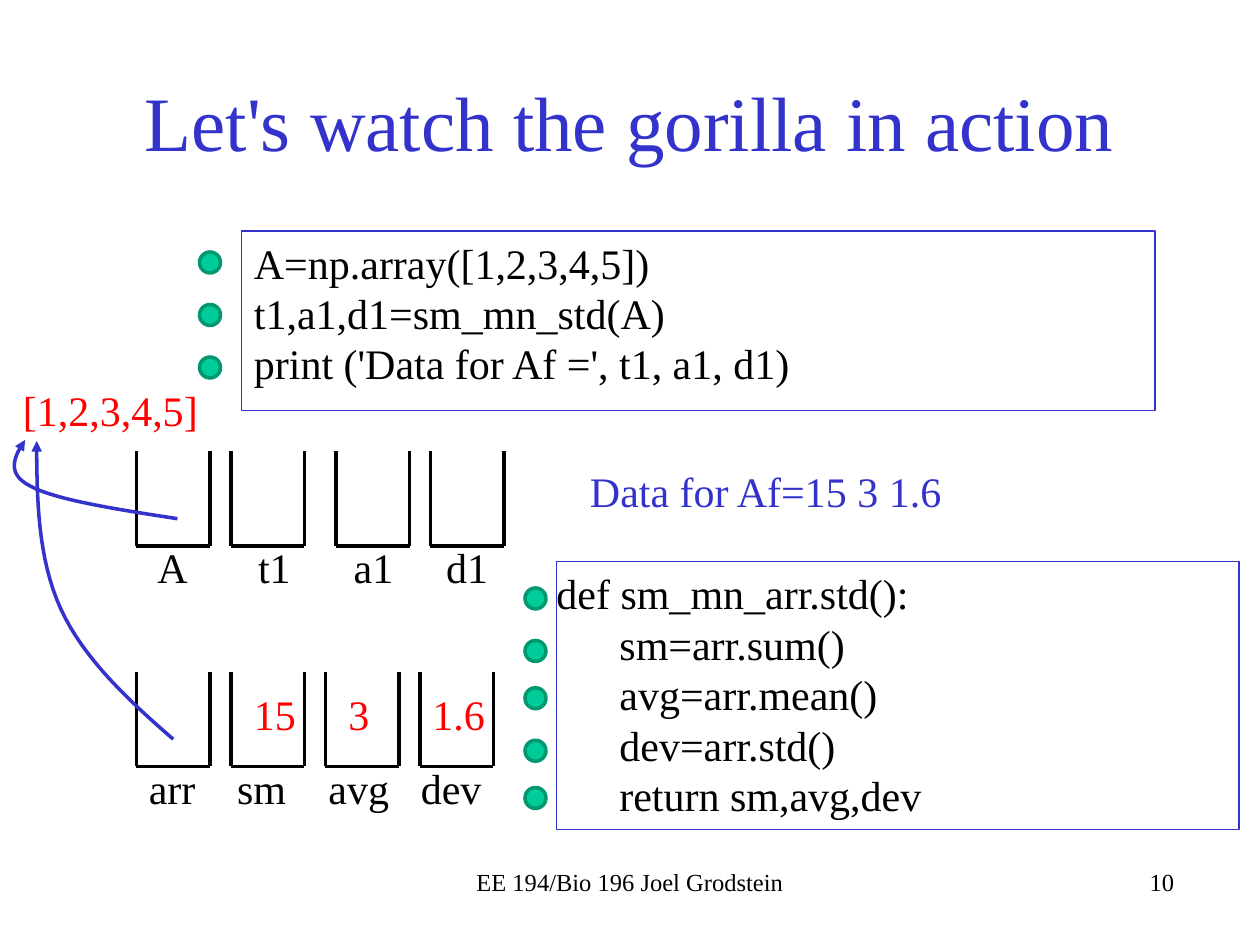
"""Build the slide that steps through variables during a NumPy function call."""
from lxml import etree
from pptx import Presentation
from pptx.dml.color import RGBColor
from pptx.enum.shapes import MSO_CONNECTOR, MSO_SHAPE
from pptx.enum.text import MSO_ANCHOR, PP_ALIGN
from pptx.oxml.ns import qn
from pptx.util import Inches, Pt

STRAIGHT = MSO_CONNECTOR.STRAIGHT
RECTANGLE, OVAL = MSO_SHAPE.RECTANGLE, MSO_SHAPE.OVAL
TOP, MIDDLE = MSO_ANCHOR.TOP, MSO_ANCHOR.MIDDLE
LEFT, CENTER, RIGHT = PP_ALIGN.LEFT, PP_ALIGN.CENTER, PP_ALIGN.RIGHT
BLUE = RGBColor(0x33, 0x33, 0xCC)
BLACK = RGBColor(0, 0, 0)
RED = RGBColor(0xFF, 0, 0)
GREEN = RGBColor(0, 0xCC, 0x99)
DARK_GREEN = RGBColor(0, 0x97, 0x71)

presentation = Presentation()
presentation.slide_width, presentation.slide_height = Inches(10), Inches(7.5)
UNIT = presentation.slide_width / 120
slide = presentation.slides.add_slide(presentation.slide_layouts[5])
shapes = slide.shapes


def grid(*units):
    """Turn grid units into slide lengths."""
    return [round(unit * UNIT) for unit in units]


def write(shape, text, size=24, color=BLACK, align=LEFT, anchor=TOP):
    """Fill a shape with lines of text, indenting those that start with a tab."""
    frame = shape.text_frame
    frame.word_wrap = True
    frame.vertical_anchor = anchor
    for index, line in enumerate(text.split("\n")):
        paragraph = frame.add_paragraph() if index else frame.paragraphs[0]
        paragraph.text = line.lstrip("\t")
        paragraph.level = int(line.startswith("\t"))
        paragraph.alignment = align
        paragraph.line_spacing = Pt(1.2 * size)
        paragraph.font.name = "Times New Roman"
        paragraph.font.size = Pt(size)
        paragraph.font.color.rgb = color


title = shapes.title
title.left, title.top, title.width, title.height = grid(9, 4, 102, 15)
write(title, "Let's watch the gorilla in action", 44, BLUE, CENTER, MIDDLE)

CALLER = "A=np.array([1,2,3,4,5])\nt1,a1,d1=sm_mn_std(A)\nprint ('Data for Af =', t1, a1, d1)"
FUNCTION = "def sm_mn_arr.std():\n\tsm=arr.sum()\n\tavg=arr.mean()\n\tdev=arr.std()\n\treturn sm,avg,dev"
for code, inset, box in (
    (CALLER, 0.1, (23, 22, 87, 17.1)),
    (FUNCTION, 0, (53, 53.5, 65, 25.5)),
):
    code_box = shapes.add_shape(RECTANGLE, *grid(*box))
    code_box.shadow.inherit = False
    code_box.fill.background()
    code_box.line.color.rgb = BLUE
    code_box.line.width = Pt(0.75)
    code_box.text_frame.margin_left = code_box.text_frame.margin_right = Inches(inset)
    write(code_box, code)

for left, tops in ((19, (24, 29, 34)), (50, (56, 61, 65.5, 70.5, 75))):
    for top in tops:
        dot = shapes.add_shape(OVAL, *grid(left, top, 2, 2))
        dot.shadow.inherit = False
        dot.fill.solid()
        dot.fill.fore_color.rgb = GREEN
        dot.line.color.rgb = DARK_GREEN
        dot.line.width = Pt(2)

for top, lefts in ((43, (13, 22, 32, 41)), (64, (13, 22, 31, 40))):
    bottom = top + 9
    for left in lefts:
        right = left + 7
        for side in (
            (left, top, left, bottom),
            (right, top, right, bottom),
            (left, bottom, right, bottom),
        ):
            edge = shapes.add_connector(STRAIGHT, *grid(*side))
            edge.line.color.rgb = BLACK
            edge.line.width = Pt(2.25)
            etree.SubElement(edge._element.spPr, qn("a:effectLst"))

for text, box, size, color, align in (
    ("[1,2,3,4,5]", (1, 36, 20, 6), 24, RED, LEFT),
    ("15", (23, 65, 7, 6), 24, RED, LEFT),
    ("3", (32, 65, 7, 6), 24, RED, LEFT),
    ("1.6", (40, 65, 8, 6), 24, RED, LEFT),
    ("Data for Af=15 3 1.6", (55, 43.7, 50, 6), 24, BLUE, LEFT),
    ("EE 194/Bio 196 Joel Grodstein", (41, 82, 38, 6), 14, BLACK, CENTER),
    ("10", (75, 82, 38, 6), 14, BLACK, RIGHT),
):
    write(shapes.add_textbox(*grid(*box)), text, size, color, align)

for names, box, stops in (
    ("A\tt1\ta1\td1", (13.8, 51, 34, 6), (9.6, 18.7, 27.5)),
    ("arr\tsm\tavg\tdev", (13, 72, 35, 6), (8.4, 17.1, 25.9)),
):
    label = shapes.add_textbox(*grid(*box))
    write(label, names)
    properties = label.text_frame.paragraphs[0]._p.get_or_add_pPr()
    tab_list = etree.Element(qn("a:tabLst"))
    properties.find(qn("a:defRPr")).addprevious(tab_list)
    for stop in grid(*stops):
        etree.SubElement(tab_list, qn("a:tab"), pos=str(stop), algn="l")

STEPS = 16
for curve in (
    ((16.9, 49.4), (11, 48.5), (5.3, 47.6), (2.9, 46.3), (0.5, 45.1), (1.4, 43.4), (2.4, 41.9)),
    ((16.5, 70.4), (12.1, 66.6), (7.9, 62.6), (5.8, 58), (3.6, 53.2), (3.5, 47.5), (3.5, 42)),
):
    points = [grid(*curve[0])]
    for start in (0, 3):
        for step in range(1, STEPS + 1):
            t = step / STEPS
            weights = ((1 - t) ** 3, 3 * t * (1 - t) ** 2, 3 * t * t * (1 - t), t**3)
            controls = zip(*curve[start:start + 4])
            points.append(grid(*(sum(w * c for w, c in zip(weights, axis)) for axis in controls)))
    builder = shapes.build_freeform(*points[0])
    builder.add_line_segments(points[1:], close=False)
    pointer = builder.convert_to_shape()
    pointer.shadow.inherit = False
    pointer.fill.background()
    pointer.line.color.rgb = BLUE
    pointer.line.width = Pt(2)
    etree.SubElement(pointer.line._get_or_add_ln(), qn("a:tailEnd"), type="triangle")

presentation.save("out.pptx")
